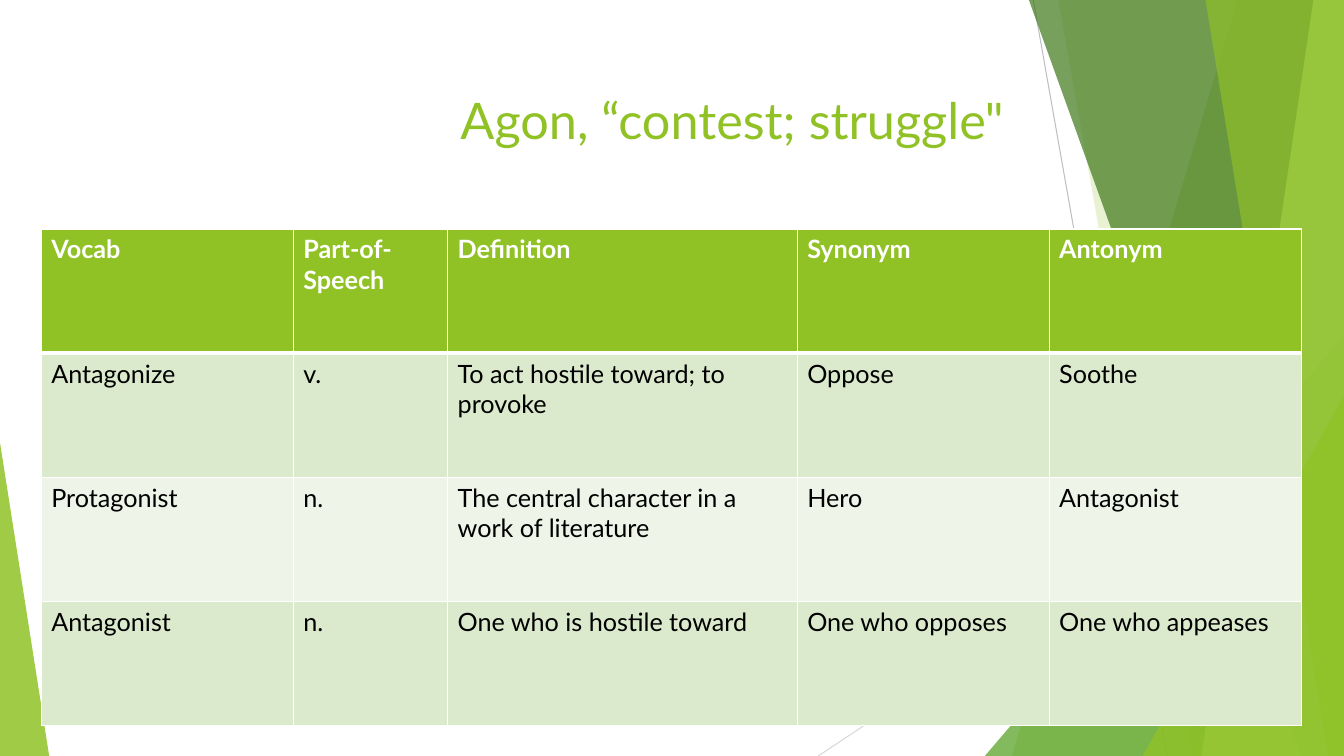
import pptx
import pptx.dml.color
import pptx.enum.shapes
import pptx.enum.text
import pptx.oxml.ns
import pptx.oxml.xmlchemy
import pptx.util

Cm = pptx.util.Cm
Pt = pptx.util.Pt
new_element = pptx.oxml.xmlchemy.OxmlElement

WIDTH, HEIGHT = 33.87, 19.05
GREEN, WHITE, BLACK = "90C226", "FFFFFF", "000000"
BANDS = ["DBE9CD", "EEF4E8"]


def colour(hex_code):
    return pptx.dml.color.RGBColor.from_string(hex_code)


def add_child(parent, tag, **attributes):
    child = new_element(tag)
    for key, value in attributes.items():
        child.set(key, str(value))
    parent.append(child)
    return child


class VocabSlide:
    font = "Lato"

    def __init__(self, deck):
        self.slide = deck.slides.add_slide(deck.slide_layouts[5])
        self.shapes = self.slide.shapes

    def line(self, start, end, hex_code):
        ray = self.shapes.add_connector(
            pptx.enum.shapes.MSO_CONNECTOR.STRAIGHT, *map(Cm, start + end))
        ray.line.color.rgb = colour(hex_code)
        ray.line.width = Pt(0.75)
        add_child(ray._element.spPr, "a:effectLst")

    def paint(self, facet, hex_code, opacity):
        facet.shadow.inherit = False
        facet.line.fill.background()
        facet.fill.solid()
        facet.fill.fore_color.rgb = colour(hex_code)
        tint = facet._element.spPr.find(pptx.oxml.ns.qn("a:solidFill"))[0]
        add_child(tint, "a:alpha", val=opacity * 1000)

    def panel(self, top_x, bottom_x, hex_code, opacity):
        outline = self.shapes.build_freeform(Cm(top_x), 0)
        corners = [(WIDTH, 0), (WIDTH, HEIGHT), (bottom_x, HEIGHT)]
        outline.add_line_segments([(Cm(x), Cm(y)) for x, y in corners])
        self.paint(outline.convert_to_shape(), hex_code, opacity)

    def triangle(self, left, top, width, apex, hex_code, opacity):
        facet = self.shapes.add_shape(
            pptx.enum.shapes.MSO_SHAPE.ISOSCELES_TRIANGLE,
            Cm(left), Cm(top), Cm(width), Cm(HEIGHT - top))
        facet.adjustments[0] = apex
        self.paint(facet, hex_code, opacity)

    def add_text(self, frame, text, size, hex_code, bold=False):
        for index, words in enumerate(text.split("\n")):
            paragraph = frame.add_paragraph() if index else frame.paragraphs[0]
            paragraph.alignment = pptx.enum.text.PP_ALIGN.LEFT
            run = paragraph.add_run()
            run.text = words
            run.font.name = self.font
            run.font.size = Pt(size)
            run.font.bold = bold
            run.font.color.rgb = colour(hex_code)

    def title(self, text, left, top, width, height):
        heading = self.shapes.title
        self.shapes._spTree.append(heading._element)
        heading.left, heading.top = Cm(left), Cm(top)
        heading.width, heading.height = Cm(width), Cm(height)
        frame = heading.text_frame
        frame.word_wrap = True
        frame.vertical_anchor = pptx.enum.text.MSO_ANCHOR.TOP
        self.add_text(frame, text, 36, GREEN)

    def borders(self, cell, widths):
        properties = cell._tc.get_or_add_tcPr()
        for index, (side, width) in enumerate(widths.items()):
            edge = new_element(f"a:ln{side}")
            edge.set("w", str(Pt(width)))
            fill = add_child(edge, "a:solidFill")
            add_child(fill, "a:srgbClr", val=WHITE)
            properties.insert(index, edge)

    def table(self, rows, left, top, column_widths, row_height):
        vocabulary = self.shapes.add_table(
            len(rows), len(column_widths), Cm(left), Cm(top),
            Cm(sum(column_widths)), Cm(row_height * len(rows))).table
        for column, width in zip(vocabulary.columns, column_widths):
            column.width = Cm(width)
        for r, entries in enumerate(rows):
            vocabulary.rows[r].height = Cm(row_height)
            header = r == 0
            for c, text in enumerate(entries):
                cell = vocabulary.cell(r, c)
                cell.fill.solid()
                cell.fill.fore_color.rgb = colour(
                    GREEN if header else BANDS[(r - 1) % 2])
                self.borders(cell, {"L": 1, "R": 1, "T": 3 if r == 1 else 1,
                                    "B": 3 if header else 1})
                self.add_text(cell.text_frame, text, 18,
                              WHITE if header else BLACK, header)


def main():
    deck = pptx.Presentation()
    deck.slide_width, deck.slide_height = Cm(WIDTH), Cm(HEIGHT)
    agon = VocabSlide(deck)

    agon.line((26.04, 0), (29.41, HEIGHT), "BFBFBF")
    agon.line((WIDTH, 10.24), (20.62, HEIGHT), "D9D9D9")
    agon.panel(31.19, 25.5, GREEN, 30)
    agon.panel(26.67, 30.05, GREEN, 20)
    agon.triangle(24.82, 8.46, 9.05, 1, "54A021", 72)
    agon.panel(25.93, 32.79, "3F7819", 70)
    agon.panel(33.1, 30.28, "C0E474", 70)
    agon.panel(30.38, 33.48, GREEN, 65)
    agon.triangle(28.8, 9.98, 5.07, 1, GREEN, 80)
    agon.triangle(0, 11.15, 1.24, 0, GREEN, 85)

    agon.title("Agon, “contest; struggle\"", 11.35, 2.13, 20.65, 4.09)
    agon.table([
        ["Vocab", "Part-of-\nSpeech", "Definition", "Synonym", "Antonym"],
        ["Antagonize", "v.", "To act hostile toward; to provoke",
         "Oppose", "Soothe"],
        ["Protagonist", "n.", "The central character in a work of literature",
         "Hero", "Antagonist"],
        ["Antagonist", "n.", "One who is hostile toward",
         "One who opposes", "One who appeases"],
    ], 1.04, 5.77, [6.35, 3.89, 8.81, 6.35, 6.35], 3.13)

    deck.save("out.pptx")


if __name__ == "__main__":
    main()
